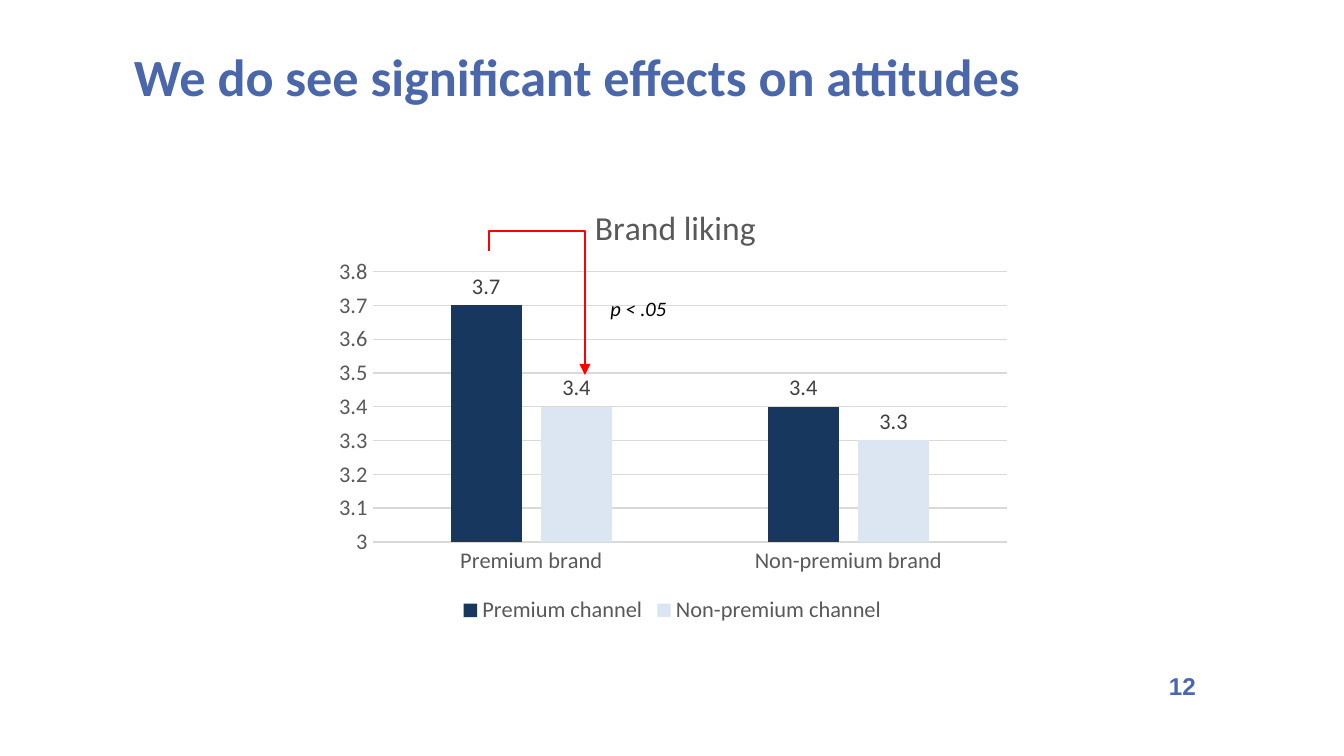
from pptx import Presentation
from pptx.chart.data import CategoryChartData
from pptx.dml.color import RGBColor
from pptx.enum.chart import XL_CHART_TYPE as ChartType, XL_LABEL_POSITION as LabelPos
from pptx.enum.chart import XL_LEGEND_POSITION as LegendPos, XL_TICK_MARK as Tick
from pptx.enum.shapes import MSO_CONNECTOR as Connector
from pptx.enum.text import MSO_ANCHOR as Anchor, MSO_AUTO_SIZE as AutoSize, PP_ALIGN as Align
from pptx.oxml import parse_xml
from pptx.oxml.ns import nsdecls, qn
from pptx.util import Emu, Pt

PX = 914400 / 134.4
BLUE, NAVY, PALE = "4967AA", "17375E", "DCE6F2"
BLACK, GREY, DARK_GREY, GRID, RED = "000000", "595959", "404040", "D9D9D9", "FF0000"


def px(length):
    return Emu(round(length * PX))


def rgb(hex_code):
    return RGBColor.from_string(hex_code)


def set_all(target, values):
    for name, value in values.items():
        setattr(target, name, value)


def set_layout(element, index, **fractions):
    """Place a chart part by fractions of the chart area."""
    for old in element.findall(qn("c:layout")):
        element.remove(old)
    target = '<c:layoutTarget val="inner"/>' if "w" in fractions else ""
    modes = "".join(f'<c:{key}Mode val="edge"/>' for key in "xy")
    values = "".join(f'<c:{key} val="{value}"/>' for key, value in fractions.items())
    element.insert(index, parse_xml(
        f'<c:layout {nsdecls("c")}><c:manualLayout>{target}{modes}{values}'
        '</c:manualLayout></c:layout>'))


class SlideBuilder:
    def __init__(self, deck, font="Calibri"):
        self.font = font
        self.slide = deck.slides.add_slide(deck.slide_layouts[5])

    def style(self, font, size, color, **values):
        set_all(font, {"name": self.font, "size": Pt(size), "bold": False, **values})
        font.color.rgb = rgb(color)

    def title(self, wording, left, top, width, height):
        heading = self.slide.shapes.title
        set_all(heading, {"left": px(left), "top": px(top),
                          "width": px(width), "height": px(height)})
        frame = heading.text_frame
        set_all(frame, {"margin_left": 0, "margin_top": 0, "margin_right": 0,
                        "margin_bottom": 0, "vertical_anchor": Anchor.TOP,
                        "auto_size": AutoSize.NONE, "word_wrap": True})
        paragraph = frame.paragraphs[0]
        set_all(paragraph, {"text": wording, "alignment": Align.LEFT, "space_before": Pt(3)})
        self.style(paragraph.runs[0].font, 28, BLUE, bold=True)

    def text(self, wording, left, top, width, height, size, color, align=Align.LEFT, **values):
        box = self.slide.shapes.add_textbox(px(left), px(top), px(width), px(height))
        box.text_frame.word_wrap = True
        paragraph = box.text_frame.paragraphs[0]
        set_all(paragraph, {"text": wording, "alignment": align})
        self.style(paragraph.runs[0].font, size, color, **values)

    def column_chart(self, heading, categories, series, left, top, width, height):
        """Draw clustered columns; series maps a name to (values, colour)."""
        data = CategoryChartData()
        data.categories = categories
        for name, (values, _) in series.items():
            data.add_series(name, values)
        chart = self.slide.shapes.add_chart(
            ChartType.COLUMN_CLUSTERED, px(left), px(top), px(width), px(height), data).chart
        self.style(chart.font, 10, BLACK)

        chart.has_title = True
        title_frame = chart.chart_title.text_frame
        title_frame.text = heading
        self.style(title_frame.paragraphs[0].runs[0].font, 18, GREY)
        set_layout(chart.element.xpath("c:chart/c:title")[0], 1, x=0.38, y=0.06)
        set_layout(chart.element.xpath("c:chart/c:plotArea")[0], 0,
                   x=0.07, y=0.22, w=0.91, h=0.59)

        chart.has_legend = True
        set_all(chart.legend, {"position": LegendPos.BOTTOM, "include_in_layout": False})
        self.style(chart.legend.font, 12, GREY)

        for axis in (chart.category_axis, chart.value_axis):
            set_all(axis, {"major_tick_mark": Tick.NONE, "minor_tick_mark": Tick.NONE})
            self.style(axis.tick_labels.font, 12, GREY)
        scale = chart.value_axis
        set_all(scale, {"minimum_scale": 3, "maximum_scale": 3.8, "major_unit": 0.1,
                        "has_major_gridlines": True})
        scale.format.line.fill.background()
        for line in (chart.category_axis.format.line, scale.major_gridlines.format.line):
            line.width = Pt(0.75)
            line.color.rgb = rgb(GRID)

        plot = chart.plots[0]
        set_all(plot, {"gap_width": 219, "overlap": -27, "vary_by_categories": False})
        for columns, (_, color) in zip(plot.series, series.values()):
            columns.format.fill.solid()
            columns.format.fill.fore_color.rgb = rgb(color)
            set_all(columns.data_labels, {"show_value": True, "position": LabelPos.OUTSIDE_END})
            self.style(columns.data_labels.font, 12, DARK_GREY)

    def bracket_arrow(self, left, top, right, bottom, rise, color):
        """Elbow arrow that goes up by rise, across, and down to (right, bottom)."""
        drop, span = bottom - top, right - left
        middle_x, middle_y = (left + right) / 2, (top + bottom) / 2
        # The frame is stored lying down, mirrored, and turned by 270 degrees.
        arrow = self.slide.shapes.add_connector(
            Connector.ELBOW, px(middle_x + drop / 2), px(middle_y - span / 2),
            px(middle_x - drop / 2), px(middle_y + span / 2))
        arrow.line.width = Pt(0.75)
        arrow.line.color.rgb = rgb(color)
        properties = arrow.element.spPr
        properties.find(qn("a:xfrm")).set("rot", str(270 * 60000))
        guides = properties.find(qn("a:prstGeom")).get_or_add_avLst()
        bend = round(-rise / drop * 100000)
        guides.append(parse_xml(f'<a:gd {nsdecls("a")} name="adj1" fmla="val {bend}"/>'))
        properties.find(qn("a:ln")).append(
            parse_xml(f'<a:tailEnd {nsdecls("a")} type="triangle"/>'))
        properties.append(parse_xml(f'<a:effectLst {nsdecls("a")}/>'))


def main():
    deck = Presentation()
    set_all(deck, {"slide_width": px(1344), "slide_height": px(756)})
    page = SlideBuilder(deck)
    page.text("12", 653, 665, 556, 43, 13, BLUE, Align.RIGHT, name="Arial", bold=True)
    page.title("We do see significant effects on attitudes", 134, 44, 1074, 95)
    page.column_chart(
        "Brand liking", ["Premium brand", "Non-premium brand"],
        {"Premium channel": ([3.7, 3.4], NAVY),
         "Non-premium channel": ([3.4, 3.3], PALE)},
        324, 171, 697, 458)
    page.text("p < .05", 597, 289, 144, 39, 11, BLACK, italic=True)
    page.bracket_arrow(489, 251, 585, 375, 20, RED)
    deck.save("out.pptx")


if __name__ == "__main__":
    main()
